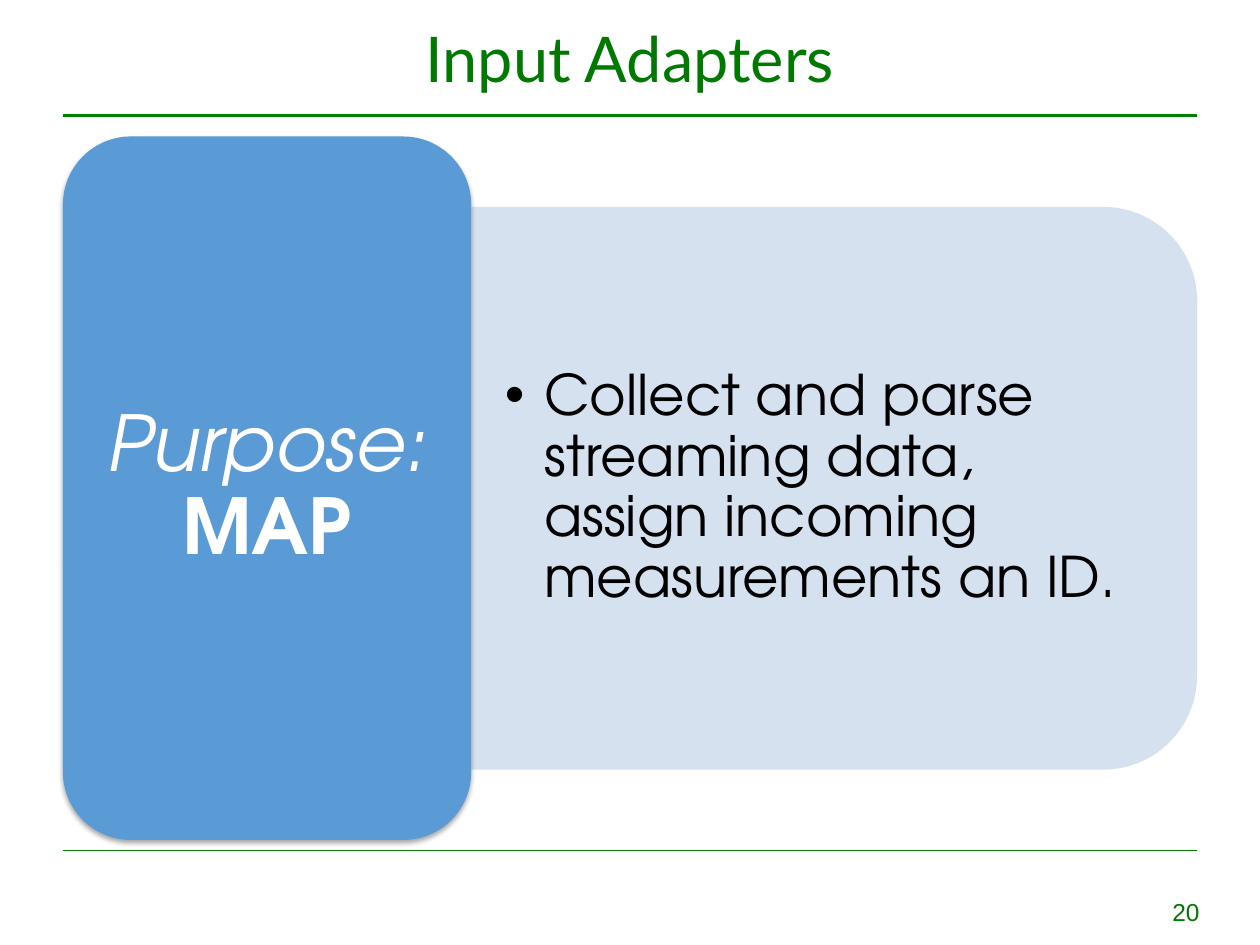
from lxml import etree
from pptx import Presentation
from pptx.dml.color import RGBColor
from pptx.enum.shapes import MSO_CONNECTOR, MSO_SHAPE
from pptx.enum.text import MSO_ANCHOR, PP_ALIGN
from pptx.oxml import parse_xml
from pptx.oxml.ns import nsdecls, qn
from pptx.util import Pt

LINE = MSO_CONNECTOR.STRAIGHT
ROUND = MSO_SHAPE.ROUNDED_RECTANGLE
TOPS = MSO_SHAPE.ROUND_2_SAME_RECTANGLE
MID, TOP = MSO_ANCHOR.MIDDLE, MSO_ANCHOR.TOP
LEFT, CENTER, RIGHT = PP_ALIGN.LEFT, PP_ALIGN.CENTER, PP_ALIGN.RIGHT

GREEN = RGBColor(0x00, 0x80, 0x00)
DARK = RGBColor(0x00, 0x79, 0x00)
BLUE = RGBColor(0x5B, 0x9B, 0xD5)
PALE = RGBColor(0xD2, 0xDE, 0xEF)
WHITE = RGBColor(0xFF, 0xFF, 0xFF)
BLACK = RGBColor(0x00, 0x00, 0x00)
GOTHIC = "TeX Gyre Adventor"


def style(run, font, size, color):
    run.font.name = font
    run.font.size = Pt(size)
    run.font.color.rgb = color


def setup(frame, anchor, side, edge):
    frame.word_wrap = True
    frame.vertical_anchor = anchor
    frame.margin_left = frame.margin_right = Pt(side)
    frame.margin_top = frame.margin_bottom = Pt(edge)


def label(slide, box, text, align, anchor, font, size, color, side=7.2, edge=3.6):
    frame = slide.shapes.add_textbox(*map(Pt, box)).text_frame
    setup(frame, anchor, side, edge)
    frame.text = text
    para = frame.paragraphs[0]
    para.alignment = align
    style(para.runs[0], font, size, color)
    return para


def rule(slide, left, right, y, width):
    line = slide.shapes.add_connector(LINE, Pt(left), Pt(y), Pt(right), Pt(y))
    line.line.color.rgb = GREEN
    line.line.width = Pt(width)
    etree.SubElement(line._element.spPr, qn("a:effectLst"))


def block(slide, kind, box, color):
    shape = slide.shapes.add_shape(kind, *map(Pt, box))
    shape.shadow.inherit = False
    shape.fill.solid()
    shape.fill.fore_color.rgb = color
    shape.line.fill.background()
    return shape


def header(slide, box):
    left, top, width, height = box
    rule(slide, left, left + width, top + height, 1.5)
    label(slide, box, "Input Adapters", CENTER, MID, "Lato", 36, DARK)


def footer(slide, box):
    left, top, width, height = box
    rule(slide, left, left + width, top, 0.75)
    number = (left + width - 34.6, top + 23, 43.2, 24.5)
    label(slide, number, "20", RIGHT, TOP, "Arial", 14, DARK)


def detail(slide, box):
    left, top, width, height = box
    shift = (width - height) / 2
    panel = block(slide, TOPS, (left + shift, top - shift, height, width), PALE)
    panel.rotation = 90
    tint = panel._element.spPr.find(".//" + qn("a:srgbClr"))
    etree.SubElement(tint, qn("a:alpha"), val="90000")

    inner = (left, top + 15.7, width - 15.7, height - 31.4)
    text = "Collect and parse streaming data, assign incoming measurements an ID."
    para = label(slide, inner, text, LEFT, MID, GOTHIC, 32, BLACK, 19.2, 9.6)
    props = para._p.get_or_add_pPr()
    props.set("marL", str(Pt(22.5)))
    props.set("indent", str(Pt(-22.5)))
    etree.SubElement(props, qn("a:buFont"), typeface="Arial")
    etree.SubElement(props, qn("a:buChar"), char="•")
    para.line_spacing = 0.9


def purpose(slide, box):
    card = block(slide, ROUND, box, BLUE)
    effects = card._element.spPr.find(qn("a:effectLst"))
    effects.append(parse_xml(
        f'<a:outerShdw {nsdecls("a")} blurRad="{Pt(3.1)}" dist="{Pt(1.8)}" '
        'dir="5400000" rotWithShape="0"><a:srgbClr val="000000">'
        '<a:alpha val="35000"/></a:srgbClr></a:outerShdw>'))
    frame = card.text_frame
    setup(frame, MID, 13.2, 6.6)
    frame.text = "Purpose: "
    para = frame.paragraphs[0]
    para.alignment = CENTER
    para.line_spacing = 0.9
    para.add_run().text = "MAP"
    for run in para.runs:
        style(run, GOTHIC, 44, WHITE)
    para.runs[0].font.italic = True
    para.runs[1].font.bold = True


def main():
    deck = Presentation()
    deck.slide_width, deck.slide_height = Pt(720), Pt(540)
    slide = deck.slides.add_slide(deck.slide_layouts[6])
    header(slide, (36, 0, 648, 66))
    footer(slide, (36, 486, 648, 54))
    detail(slide, (269.3, 118.2, 414.7, 321.6))
    purpose(slide, (36, 78, 233.3, 402))
    deck.save("out.pptx")


if __name__ == "__main__":
    main()
